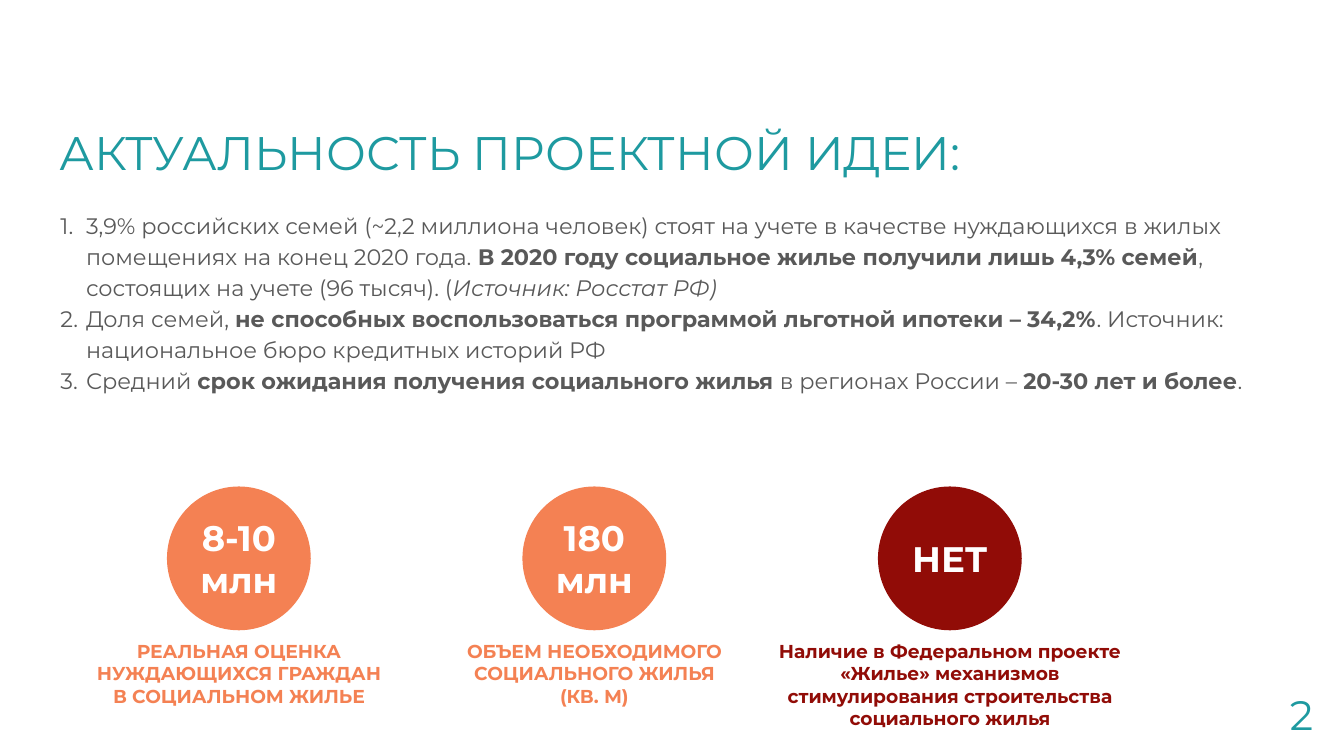
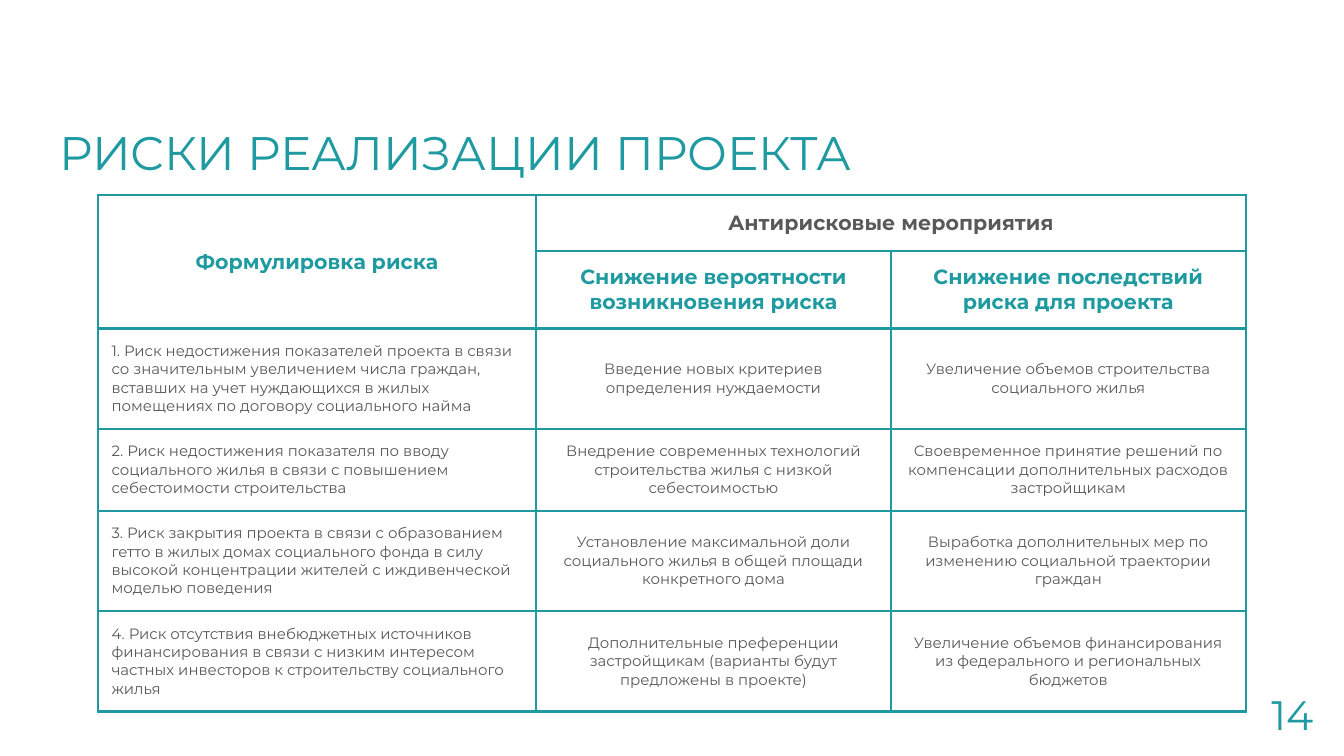
"""Build two slides on a social housing project: its relevance and its risks."""
from lxml import etree
from pptx import Presentation
from pptx.dml.color import RGBColor
from pptx.enum.shapes import MSO_SHAPE
from pptx.enum.text import MSO_ANCHOR, MSO_AUTO_SIZE, PP_ALIGN
from pptx.oxml.ns import qn
from pptx.util import Inches, Pt

OVAL = MSO_SHAPE.OVAL
TOP, MIDDLE = MSO_ANCHOR.TOP, MSO_ANCHOR.MIDDLE
LEFT, CENTER, RIGHT = PP_ALIGN.LEFT, PP_ALIGN.CENTER, PP_ALIGN.RIGHT
FIXED, GROW = MSO_AUTO_SIZE.NONE, MSO_AUTO_SIZE.SHAPE_TO_FIT_TEXT

HUES = {"teal": "1E9AA0", "gray": "595959", "coral": "F48153",
        "wine": "910C07", "white": "FFFFFF"}
FONT = "Montserrat"
WIDE = 10
HIGH = WIDE * 9 / 16
EDGE, PAD = 0.34, 0.1
HEAD, FLOW = 0.82, 1.45

NEED = "АКТУАЛЬНОСТЬ ПРОЕКТНОЙ ИДЕИ:"
FACTS = [
    [("3,9% российских семей (~2,2 миллиона человек) стоят на учете в качестве "
      "нуждающихся в жилых помещениях на конец 2020 года. ", ""),
     ("В 2020 году социальное жилье получили лишь 4,3% семей", "b"),
     (", состоящих на учете (96 тысяч). (", ""),
     ("Источник: Росстат РФ)", "i")],
    [("Доля семей, ", ""),
     ("не способных воспользоваться программой льготной ипотеки – 34,2%", "b"),
     (". Источник: национальное бюро кредитных историй РФ", "")],
    [("Средний ", ""),
     ("срок ожидания получения социального жилья", "b"),
     (" в регионах России – ", ""),
     ("20-30 лет и более", "b"),
     (".", "")],
]
STATS = [
    ("coral", ["8-10", "млн"],
     ["РЕАЛЬНАЯ ОЦЕНКА", "НУЖДАЮЩИХСЯ ГРАЖДАН", "В СОЦИАЛЬНОМ ЖИЛЬЕ"], 0.5),
    ("coral", ["180", "млн"],
     ["ОБЪЕМ НЕОБХОДИМОГО", "СОЦИАЛЬНОГО ЖИЛЬЯ\n(КВ. М)"], 0.5),
    ("wine", ["НЕТ"],
     ["Наличие в Федеральном проекте «Жилье» механизмов стимулирования "
      "строительства социального жилья"], 0.67),
]
RISK = "РИСКИ РЕАЛИЗАЦИИ ПРОЕКТА"
GRID = [
    ["Формулировка риска", "Антирисковые мероприятия", ""],
    ["", "Снижение вероятности возникновения риска",
     "Снижение последствий риска для проекта"],
    ["1. Риск недостижения показателей проекта в связи со значительным "
     "увеличением числа граждан, вставших на учет нуждающихся в жилых "
     "помещениях по договору социального найма",
     "Введение новых критериев определения нуждаемости",
     "Увеличение объемов строительства социального жилья"],
    ["2. Риск недостижения показателя по вводу социального жилья в связи с "
     "повышением себестоимости строительства",
     "Внедрение современных технологий строительства жилья с низкой "
     "себестоимостью",
     "Своевременное принятие решений по компенсации дополнительных расходов "
     "застройщикам"],
    ["3. Риск закрытия проекта в связи с образованием гетто в жилых домах "
     "социального фонда в силу высокой концентрации жителей с иждивенческой "
     "моделью поведения",
     "Установление максимальной доли социального жилья в общей площади "
     "конкретного дома",
     "Выработка дополнительных мер по изменению социальной траектории граждан"],
    ["4. Риск отсутствия внебюджетных источников финансирования в связи с "
     "низким интересом частных инвесторов к строительству социального жилья",
     "Дополнительные преференции застройщикам (варианты будут предложены в "
     "проекте)",
     "Увеличение объемов финансирования из федерального и региональных "
     "бюджетов"],
]
COLS = [3.26, 2.64, 2.64]
ROW, TALL = 0.42, 3.78


def rgb(hue):
    return RGBColor.from_string(HUES[hue])


def number(para):
    props = para._p.get_or_add_pPr()
    props.set("marL", str(Inches(0.2)))
    props.set("indent", str(Inches(-0.19)))
    tint = etree.SubElement(props, qn("a:buClr"))
    etree.SubElement(tint, qn("a:srgbClr"), val=HUES["gray"])
    etree.SubElement(props, qn("a:buAutoNum"), type="arabicPeriod")


def write(frame, paras, size, hue, align=LEFT, bold=False, listed=False):
    for at, runs in enumerate(paras):
        para = frame.paragraphs[0] if at == 0 else frame.add_paragraph()
        if listed:
            number(para)
            para.line_spacing = 1.15
        para.alignment = align
        para.space_before = Pt(0)
        if isinstance(runs, str):
            runs = [(runs, "b" if bold else "")]
        for text, style in runs:
            for row, part in enumerate(text.split("\n")):
                if row:
                    para.add_line_break()
                run = para.add_run()
                run.text = part
                font = run.font
                font.name, font.size = FONT, Pt(size)
                font.bold, font.italic = style == "b", style == "i"
                font.color.rgb = rgb(hue)


def setup(shape, pad=PAD, anchor=TOP, fit=FIXED):
    frame = shape.text_frame
    frame.word_wrap = True
    frame.auto_size = fit
    frame.vertical_anchor = anchor
    frame.margin_left = frame.margin_right = Inches(pad)
    frame.margin_top = frame.margin_bottom = Inches(pad)
    return frame


def place(shape, *area):
    shape.left, shape.top, shape.width, shape.height = map(Inches, area)


def label(slide, area, **look):
    return setup(slide.shapes.add_textbox(*map(Inches, area)), **look)


def start(deck, layout, title, page):
    slide = deck.slides.add_slide(deck.slide_layouts[layout])
    head = slide.shapes.title
    place(head, EDGE, HEAD, WIDE - 2 * EDGE, FLOW - HEAD)
    write(setup(head), [title], 25.2, "teal")
    foot = label(slide, (9.27, 5.1, 0.6, 0.43), anchor=MIDDLE)
    write(foot, [page], 22, "teal", RIGHT)
    return slide


def show_need(deck):
    slide = start(deck, 1, NEED, "2")
    body = slide.placeholders[1]
    place(body, EDGE, FLOW, WIDE - 2 * EDGE, 1.6)
    write(setup(body, fit=GROW), FACTS, 12, "gray", listed=True)
    disc = 1.07
    left, step = 0.455, 2.645
    for at, (hue, value, note, tall) in enumerate(STATS):
        x = left + at * step
        area = (x + (step - disc) / 2, 3.62, disc, disc)
        ball = slide.shapes.add_shape(OVAL, *map(Inches, area))
        ball.shadow.inherit = False
        ball.fill.solid()
        ball.fill.fore_color.rgb = rgb(hue)
        ball.line.fill.background()
        write(setup(ball, 0, MIDDLE), value, 19, "white", CENTER, True)
        text = label(slide, (x, 4.76, step, tall), pad=0, fit=GROW)
        write(text, note, 10, hue, CENTER, True)


def border(cell):
    props = cell._tc.get_or_add_tcPr()
    for at, side in enumerate("LRTB"):
        line = etree.Element(qn("a:ln" + side), w=str(Pt(1.5)))
        fill = etree.SubElement(line, qn("a:solidFill"))
        etree.SubElement(fill, qn("a:srgbClr"), val=HUES["teal"])
        props.insert(at, line)


def show_risks(deck):
    slide = start(deck, 5, RISK, "14")
    area = ((WIDE - sum(COLS)) / 2, FLOW, sum(COLS), TALL)
    frame = slide.shapes.add_table(len(GRID), len(COLS), *map(Inches, area))
    table = frame.table
    table.first_row = table.horz_banding = False
    for col, width in zip(table.columns, COLS):
        col.width = Inches(width)
    for row in table.rows:
        row.height = Inches(ROW)
    place(frame, *area)
    table.cell(0, 0).merge(table.cell(1, 0))
    table.cell(0, 1).merge(table.cell(0, 2))
    for r, line in enumerate(GRID):
        for c, text in enumerate(line):
            cell = table.cell(r, c)
            cell.fill.background()
            border(cell)
            cell.margin_left = cell.margin_right = Inches(PAD)
            cell.margin_top = cell.margin_bottom = Inches(PAD)
            top = r < 2
            mid = top or c > 0
            cell.vertical_anchor = MIDDLE if mid else TOP
            hue = "teal" if top and (r, c) != (0, 1) else "gray"
            if text:
                write(cell.text_frame, [text], 11 if top else 8, hue,
                      CENTER if mid else LEFT, top)


def main():
    deck = Presentation()
    deck.slide_width, deck.slide_height = Inches(WIDE), Inches(HIGH)
    show_need(deck)
    show_risks(deck)
    deck.save("out.pptx")


if __name__ == "__main__":
    main()
